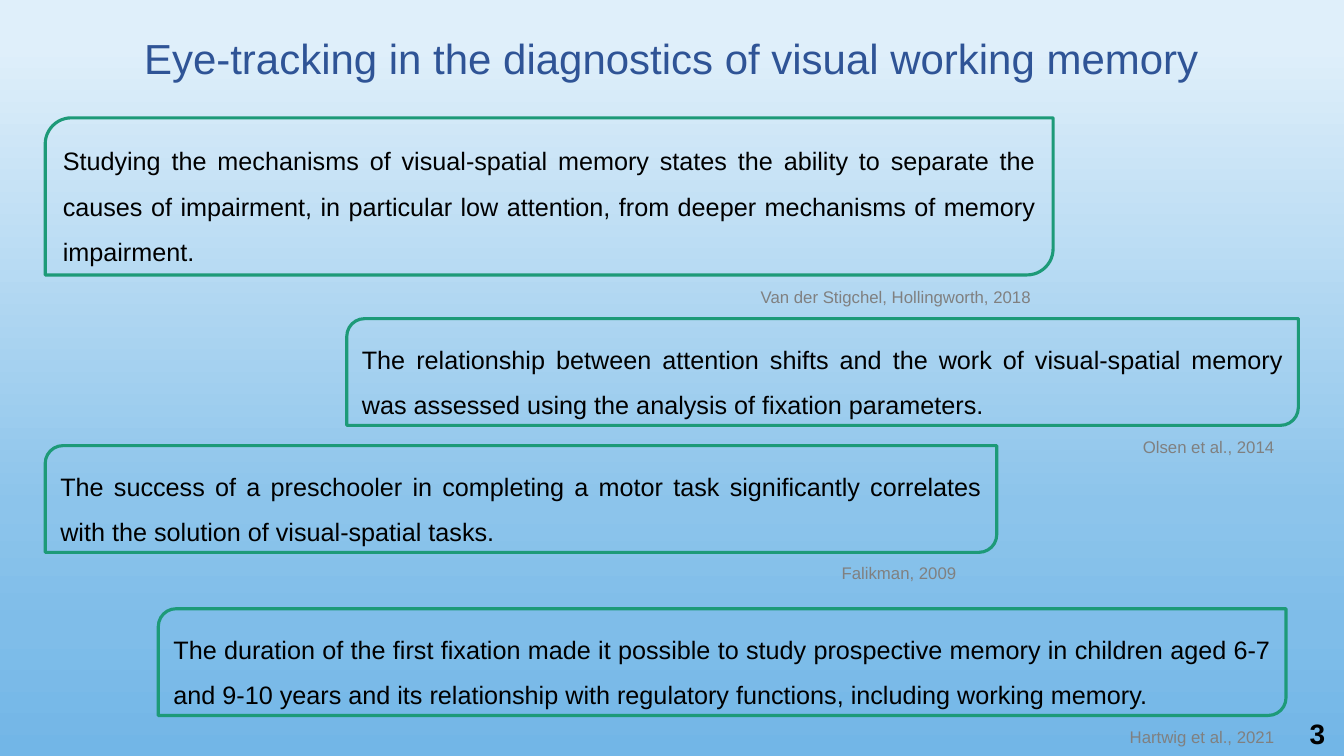
from dataclasses import dataclass

from lxml import etree
from pptx import Presentation
from pptx import util as u
from pptx.dml.color import RGBColor
from pptx.enum import shapes, text
from pptx.oxml.ns import qn


@dataclass(frozen=True)
class Theme:
    font: str = "Arial"
    title_color: str = "2F5496"
    body_color: str = "000000"
    source_color: str = "808080"
    border_color: str = "1D9A78"
    title_size: int = 30
    body_size: int = 18
    source_size: int = 12
    number_size: int = 20
    border_width: float = 2.25
    background: tuple = ((6, "DFEFFA"), (67, "8CC4EB"), (83, "7FBDE9"), (100, "72B6E7"))


THEME = Theme()

# Each finding: text, its frame (left, top, width, height in cm),
# source, and the source's left and top in cm
FINDINGS = [
    ("Studying the mechanisms of visual-spatial memory states the ability to separate "
     "the causes of impairment, in particular low attention, from deeper mechanisms of "
     "memory impairment.",
     (1.14, 2.97, 25.4, 3.96), "Van der Stigchel, Hollingworth, 2018", (18.92, 7.09)),
    ("The relationship between attention shifts and the work of visual-spatial memory "
     "was assessed using the analysis of fixation parameters.",
     (8.74, 8.03, 23.98, 2.69), "Olsen et al., 2014", (28.55, 10.87)),
    ("The success of a preschooler in completing a motor task significantly correlates "
     "with the solution of visual-spatial tasks.",
     (1.14, 11.23, 23.98, 2.69), "Falikman, 2009", (20.96, 14.05)),
    ("The duration of the first fixation made it possible to study prospective memory in "
     "children aged 6-7 and 9-10 years and its relationship with regulatory functions, "
     "including working memory.",
     (3.99, 15.34, 28.42, 2.69), "Hartwig et al., 2021", (28.22, 18.19)),
]


def in_cm(values):
    return [u.Cm(value) for value in values]


def write(shape, words, size, color, align, anchor=text.MSO_ANCHOR.TOP, spacing=1.0, bold=False):
    frame = shape.text_frame
    frame.text = words
    frame.word_wrap = True
    frame.auto_size = text.MSO_AUTO_SIZE.NONE
    frame.vertical_anchor = anchor
    para = frame.paragraphs[0]
    para.alignment = align
    para.line_spacing = spacing
    span = para.runs[0]
    span.font.name = THEME.font
    span.font.size = u.Pt(size)
    span.font.bold = bold
    span.font.color.rgb = RGBColor.from_string(color)


def paint_background(page):
    fill = page.background.fill
    fill.gradient()
    fill.gradient_angle = 270
    stops = page.element.find(".//" + qn("a:gsLst"))
    for stop in list(stops):
        stops.remove(stop)
    for percent, color in THEME.background:
        stop = etree.SubElement(stops, qn("a:gs"), pos=str(percent * 1000))
        etree.SubElement(stop, qn("a:srgbClr"), val=color)


def add_title(page, words):
    title = page.shapes.title
    title.left, title.top, title.width, title.height = in_cm((1.14, 0.18, 31.57, 2.69))
    write(title, words, THEME.title_size, THEME.title_color, text.PP_ALIGN.CENTER,
          text.MSO_ANCHOR.MIDDLE, 0.9)


def add_finding(page, words, frame):
    box = page.shapes.add_shape(shapes.MSO_SHAPE.ROUND_2_DIAG_RECTANGLE, *in_cm(frame))
    box.shadow.inherit = False
    box.fill.background()
    box.line.color.rgb = RGBColor.from_string(THEME.border_color)
    box.line.width = u.Pt(THEME.border_width)
    write(box, words, THEME.body_size, THEME.body_color, text.PP_ALIGN.JUSTIFY, spacing=1.5)
    box.text_frame.auto_size = text.MSO_AUTO_SIZE.SHAPE_TO_FIT_TEXT


def add_source(page, words, corner):
    width = 7.6 if len(words) > 20 else 4.5
    box = page.shapes.add_textbox(*in_cm((*corner, width, 0.77)))
    write(box, words, THEME.source_size, THEME.source_color, text.PP_ALIGN.LEFT)


def add_page_number(page, number):
    box = page.shapes.add_textbox(*in_cm((26.06, 18.08, 7.59, 0.94)))
    write(box, number, THEME.number_size, THEME.body_color, text.PP_ALIGN.RIGHT,
          text.MSO_ANCHOR.BOTTOM, bold=True)


def main():
    deck = Presentation()
    deck.slide_width, deck.slide_height = in_cm((33.87, 19.05))
    title_only = deck.slide_layouts[5]
    page = deck.slides.add_slide(title_only)
    paint_background(page)
    add_title(page, "Eye-tracking in the diagnostics of visual working memory")
    for words, frame, source, corner in FINDINGS:
        add_finding(page, words, frame)
        add_source(page, source, corner)
    add_page_number(page, "3")
    deck.save("out.pptx")


if __name__ == "__main__":
    main()
